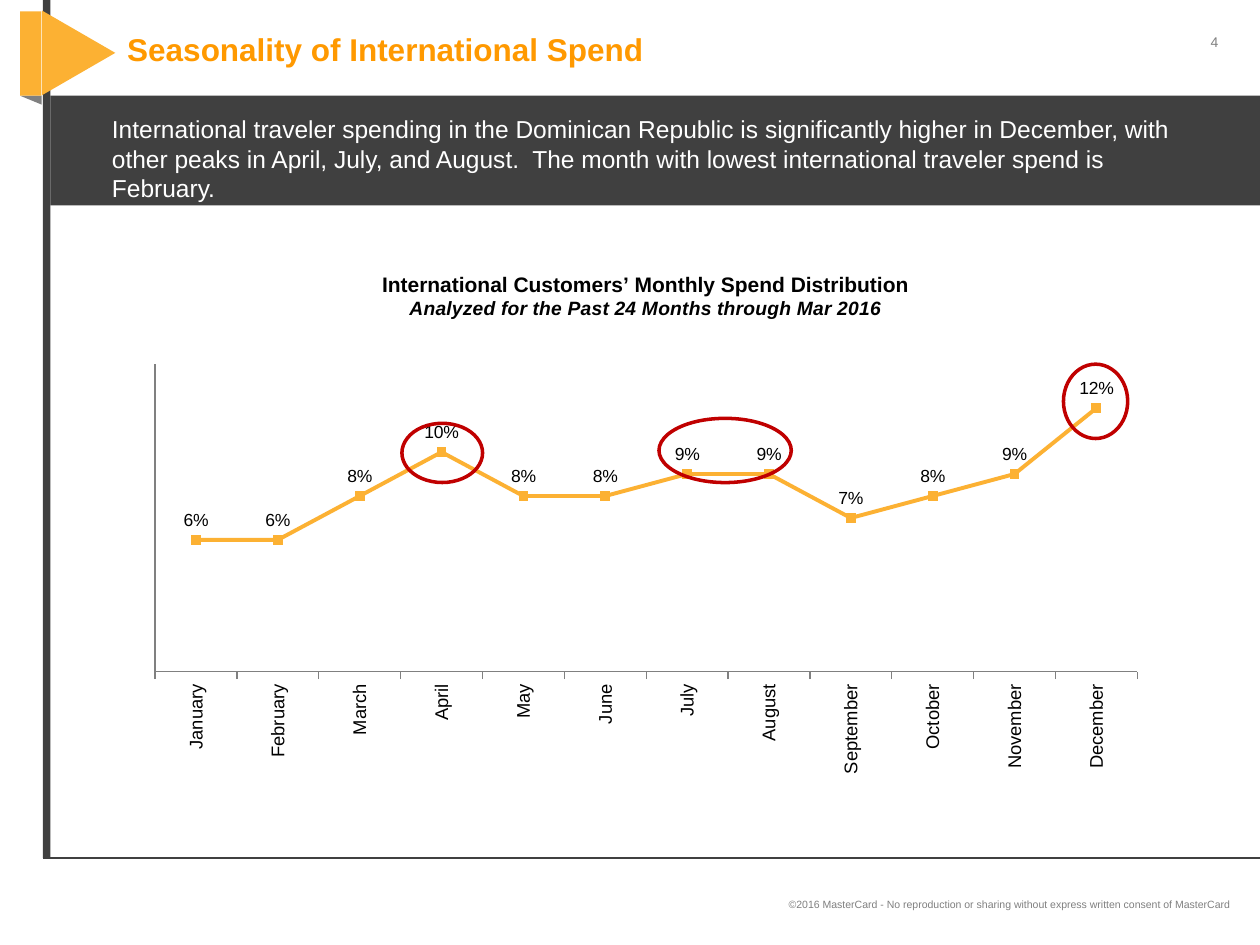
from dataclasses import dataclass

from lxml import etree
from pptx import Presentation
from pptx.chart.data import CategoryChartData
from pptx.dml.color import RGBColor
from pptx.enum.chart import XL_CHART_TYPE, XL_LABEL_POSITION, XL_MARKER_STYLE, XL_TICK_LABEL_POSITION, XL_TICK_MARK
from pptx.enum.shapes import MSO_CONNECTOR, MSO_SHAPE
from pptx.enum.text import MSO_ANCHOR, PP_ALIGN
from pptx.oxml import parse_xml
from pptx.oxml.ns import nsdecls, qn
from pptx.util import Inches, Pt

RECT, OVAL = MSO_SHAPE.RECTANGLE, MSO_SHAPE.OVAL
TRIANGLE, RIGHT_TRIANGLE = MSO_SHAPE.ISOSCELES_TRIANGLE, MSO_SHAPE.RIGHT_TRIANGLE
LEFT, CENTER, RIGHT = PP_ALIGN.LEFT, PP_ALIGN.CENTER, PP_ALIGN.RIGHT
TOP, MIDDLE = MSO_ANCHOR.TOP, MSO_ANCHOR.MIDDLE


@dataclass(frozen=True)
class Theme:
    """Colours, font and type sizes of the deck."""
    font: str = "Arial"
    dark: str = "404040"
    grey: str = "808080"
    amber: str = "FCB133"
    orange: str = "FF9900"
    red: str = "C00000"
    white: str = "FFFFFF"
    black: str = "000000"
    title: float = 18
    body: float = 14
    chart: float = 12
    subtitle: float = 11
    axis: float = 10.5
    label: float = 10
    page: float = 8
    footer: float = 6


T = Theme()
MONTHS = ["January", "February", "March", "April", "May", "June", "July",
          "August", "September", "October", "November", "December"]
SPEND = [0.06, 0.06, 0.08, 0.10, 0.08, 0.08, 0.09, 0.09, 0.07, 0.08, 0.09, 0.12]
PLOT = {"x": 0.021, "y": 0.21, "w": 0.959, "h": 0.569}


def rgb(color):
    """Turn a hex string into a colour."""
    return RGBColor.from_string(color)


def style(font, size, color, bold=None, italic=None):
    """Format one font."""
    font.name, font.size, font.bold, font.italic = T.font, Pt(size), bold, italic
    font.color.rgb = rgb(color)


def add_shape(s, kind, box, fill=None, line=None, rotation=0):
    """Add a preset shape with either a fill or an outline."""
    sp = s.shapes.add_shape(kind, *map(Inches, box))
    sp.shadow.inherit = False
    sp.rotation = rotation
    if fill:
        sp.fill.solid()
        sp.fill.fore_color.rgb = rgb(fill)
    else:
        sp.fill.background()
    if line:
        sp.line.color.rgb = rgb(line)
        sp.line.width = Pt(2)
    else:
        sp.line.fill.background()


def add_text(s, box, text, size, color, align=LEFT, anchor=TOP, wrap=True):
    """Add a one-paragraph text box."""
    tf = s.shapes.add_textbox(*map(Inches, box)).text_frame
    tf.word_wrap, tf.vertical_anchor = wrap, anchor
    p = tf.paragraphs[0]
    p.text, p.alignment = text, align
    style(p.font, size, color)


def add_frame(s, width, height):
    """Draw the side bar, arrow badge, base rule, page number and footer."""
    left, base = 0.34, 6.81
    add_shape(s, RECT, (left, 0, 0.06, base), T.dark)
    add_shape(s, RIGHT_TRIANGLE, (0.16, 0.76, 0.17, 0.07), T.grey, rotation=180)
    add_shape(s, TRIANGLE, (0.29, 0.13, 0.67, 0.58), T.amber, rotation=90)
    add_shape(s, RECT, (0.16, 0.09, 0.17, 0.67), T.amber)
    rule = s.shapes.add_connector(MSO_CONNECTOR.STRAIGHT, *map(Inches, (left, base, width, base)))
    rule.line.color.rgb = rgb(T.dark)
    rule.line.width = Pt(0.75)
    etree.SubElement(rule._element.spPr, qn("a:effectLst"))
    add_text(s, (width - 0.53, 0.22, 0.34, 0.24), "4", T.page, T.grey, CENTER, wrap=False)
    add_text(s, (0.11, height - 0.59, 9.75, 0.54),
             "©2016 MasterCard - No reproduction or sharing without express written consent of MasterCard",
             T.footer, T.grey, RIGHT, MIDDLE)


def add_title(s, box):
    """Place and format the title placeholder."""
    sp = s.shapes.title
    sp.left, sp.top, sp.width, sp.height = map(Inches, box)
    tf = sp.text_frame
    tf.vertical_anchor = MIDDLE
    p = tf.paragraphs[0]
    p.text, p.alignment, p.line_spacing = "Seasonality of International Spend", LEFT, Pt(16)
    style(p.font, T.title, T.orange, bold=True)


def add_message(s, box):
    """Draw the dark band with the key message."""
    x, y, w, h = box
    add_shape(s, RECT, box, T.dark)
    add_text(s, (x + 0.39, y + 0.1, w - 0.77, h - 0.07),
             "International traveler spending in the Dominican Republic is significantly higher "
             "in December, with other peaks in April, July, and August.  The month with lowest "
             "international traveler spend is February.", T.body, T.white)


def format_title(chart):
    """Write the two-line chart title."""
    tf = chart.chart_title.text_frame
    lines = [("International Customers’ Monthly Spend Distribution", T.chart, False),
             ("Analyzed for the Past 24 Months through Mar 2016", T.subtitle, True)]
    for i, (text, size, italic) in enumerate(lines):
        p = tf.add_paragraph() if i else tf.paragraphs[0]
        r = p.add_run()
        r.text = text
        style(r.font, size, T.black, True, italic)
    chart.chart_title.include_in_layout = True


def format_axes(chart):
    """Format the month axis and the unlabelled value axis."""
    months, spend = chart.category_axis, chart.value_axis
    for axis in (months, spend):
        axis.has_major_gridlines = False
        axis.format.line.color.rgb = rgb(T.grey)
        axis.format.line.width = Pt(0.75)
    months.major_tick_mark = XL_TICK_MARK.OUTSIDE
    style(months.tick_labels.font, T.axis, T.black)
    months._element.find(qn("c:txPr")).find(qn("a:bodyPr")).set("rot", "-5400000")
    spend.minimum_scale, spend.maximum_scale = 0, 0.14
    spend.major_tick_mark = XL_TICK_MARK.NONE
    spend.tick_label_position = XL_TICK_LABEL_POSITION.NONE


def format_series(chart):
    """Format the line, its markers and its value labels."""
    series = chart.plots[0].series[0]
    series.smooth = False
    series.format.line.color.rgb = rgb(T.amber)
    series.format.line.width = Pt(2.25)
    marker = series.marker
    marker.style, marker.size = XL_MARKER_STYLE.SQUARE, 5
    marker.format.fill.solid()
    marker.format.fill.fore_color.rgb = rgb(T.amber)
    marker.format.line.color.rgb = rgb(T.amber)
    labels = series.data_labels
    labels.show_value, labels.position = True, XL_LABEL_POSITION.ABOVE
    labels.number_format, labels.number_format_is_linked = "0%", False
    style(labels.font, T.label, T.black)


def set_plot_layout(chart):
    """Fix the inner plot area as shares of the chart."""
    area = chart._chartSpace.chart.plotArea
    for old in area.findall(qn("c:layout")):
        area.remove(old)
    shares = "".join(f'<c:{key} val="{val}"/>' for key, val in PLOT.items())
    area.insert(0, parse_xml(
        f'<c:layout {nsdecls("c")}><c:manualLayout><c:layoutTarget val="inner"/>'
        f'<c:xMode val="edge"/><c:yMode val="edge"/>{shares}</c:manualLayout></c:layout>'))


def add_spend_chart(s, box):
    """Add the monthly line chart and circle its peaks."""
    data = CategoryChartData(number_format="0%")
    data.categories = MONTHS
    data.add_series("Series 1", SPEND)
    chart = s.shapes.add_chart(XL_CHART_TYPE.LINE_MARKERS, *map(Inches, box), data).chart
    chart.has_legend = False
    chart.plots[0].vary_by_categories = False
    style(chart.font, T.chart, T.black)
    format_title(chart)
    format_axes(chart)
    format_series(chart)
    set_plot_layout(chart)
    x, y = box[:2]
    for dx, dy, w, h in ((7.38, 0.9, 0.51, 0.59), (2.13, 1.37, 0.64, 0.47), (4.17, 1.33, 1.05, 0.51)):
        add_shape(s, OVAL, (x + dx, y + dy, w, h), line=T.red)


def main():
    """Build and save the slide."""
    width, height = 10, 7.5
    prs = Presentation()
    prs.slide_width, prs.slide_height = Inches(width), Inches(height)
    s = prs.slides.add_slide(prs.slide_layouts[5])
    add_frame(s, width, height)
    add_message(s, (0.4, 0.76, width - 0.4, 0.87))
    add_title(s, (0.91, 0.09, 7.92, 0.67))
    add_spend_chart(s, (1.06, 1.99, 8.13, 4.29))
    prs.save("out.pptx")


if __name__ == "__main__":
    main()
